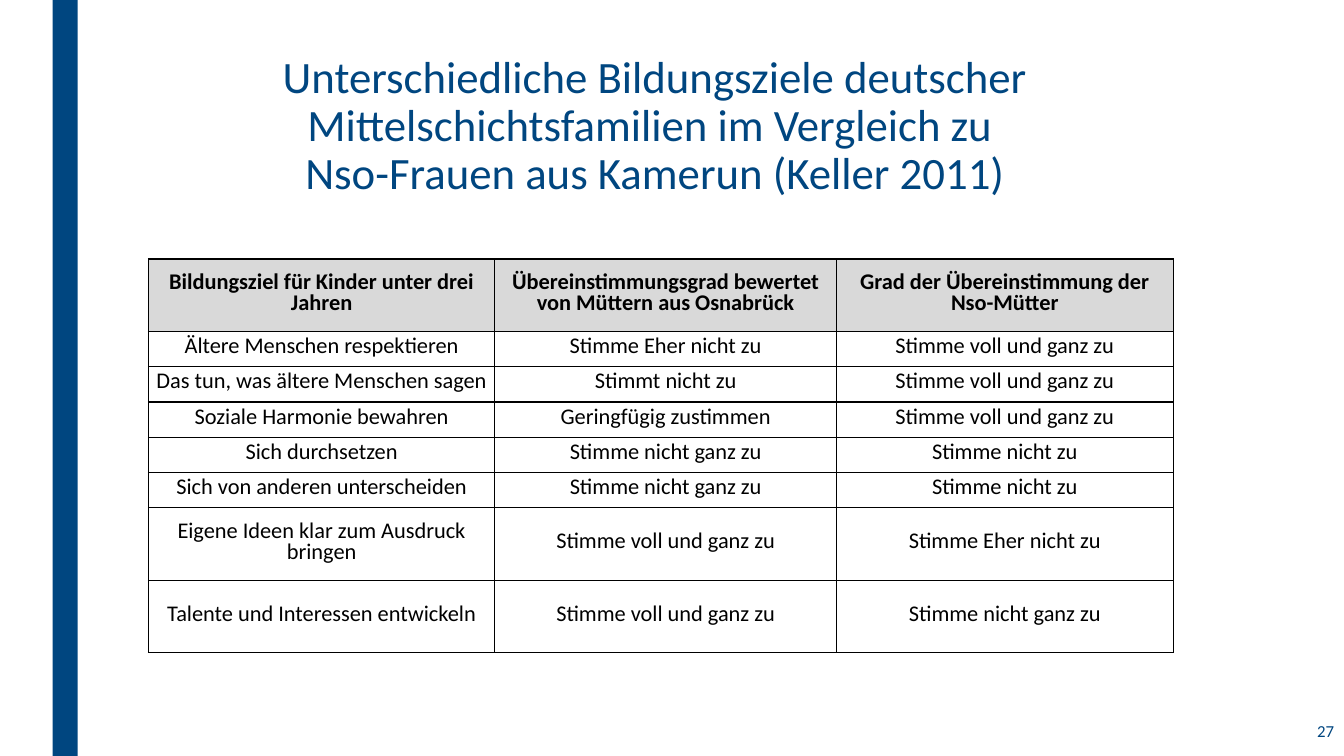
import pptx
import pptx.dml.color
import pptx.enum.shapes
import pptx.enum.text
import pptx.oxml
import pptx.oxml.ns
import pptx.util

Pt = pptx.util.Pt
ALIGN = pptx.enum.text.PP_ALIGN
ANCHOR = pptx.enum.text.MSO_ANCHOR


def color(value):
    return pptx.dml.color.RGBColor.from_string(value)


class GoalsSlide:
    font = "Calibri"
    blue = "004680"
    black = "000000"
    header_gray = "D9D9D9"

    def __init__(self, deck):
        self.slide = deck.slides.add_slide(deck.slide_layouts[6])

    def add_words(self, paragraph, words, size, ink, align, bold=False):
        paragraph.alignment = align
        for number, line in enumerate(words.split("\n")):
            if number:
                paragraph.add_line_break()
            run = paragraph.add_run()
            run.text = line
            run.font.name = self.font
            run.font.size = Pt(size)
            run.font.bold = bold
            run.font.color.rgb = color(ink)

    def bar(self, left, top, width, height):
        stripe = self.slide.shapes.add_shape(
            pptx.enum.shapes.MSO_SHAPE.RECTANGLE,
            Pt(left), Pt(top), Pt(width), Pt(height))
        stripe.shadow.inherit = False
        stripe.fill.solid()
        stripe.fill.fore_color.rgb = color(self.blue)
        stripe.line.fill.background()

    def text(self, left, top, width, height, words, size, align, anchor, spacing=1.0):
        frame = self.slide.shapes.add_textbox(
            Pt(left), Pt(top), Pt(width), Pt(height)).text_frame
        frame.word_wrap = True
        frame.vertical_anchor = anchor
        paragraph = frame.paragraphs[0]
        paragraph.line_spacing = spacing
        self.add_words(paragraph, words, size, self.blue, align)

    def border(self, cell):
        """Draw a 1 pt line on all four sides of a cell."""
        properties = cell._tc.get_or_add_tcPr()
        for position, side in enumerate(("lnL", "lnR", "lnT", "lnB")):
            properties.insert(position, pptx.oxml.parse_xml(
                f'<a:{side} {pptx.oxml.ns.nsdecls("a")} w="{Pt(1)}"><a:solidFill>'
                f'<a:srgbClr val="{self.black}"/></a:solidFill></a:{side}>'))

    def cell(self, cell, words, header):
        cell.margin_left = cell.margin_right = Pt(5)
        cell.margin_top = cell.margin_bottom = 0
        cell.vertical_anchor = ANCHOR.MIDDLE
        if header:
            cell.fill.solid()
            cell.fill.fore_color.rgb = color(self.header_gray)
        else:
            cell.fill.background()
        paragraph = cell.text_frame.paragraphs[0]
        paragraph.line_spacing = Pt(15)
        self.add_words(paragraph, words, 16, self.black, ALIGN.CENTER, header)
        self.border(cell)

    def table(self, left, top, widths, heights, rows):
        table = self.slide.shapes.add_table(
            len(rows), len(widths), Pt(left), Pt(top),
            Pt(sum(widths)), Pt(sum(heights))).table
        table.horz_banding = False
        for column, width in zip(table.columns, widths):
            column.width = Pt(width)
        for row, height in zip(table.rows, heights):
            row.height = Pt(height)
        for r, row in enumerate(rows):
            for c, words in enumerate(row):
                self.cell(table.cell(r, c), words, header=r == 0)


FULL = "Stimme voll und ganz zu"
PARTLY = "Stimme nicht ganz zu"
RATHER_NOT = "Stimme Eher nicht zu"
NOT = "Stimme nicht zu"

RATINGS = [
    ("Bildungsziel für Kinder unter drei Jahren",
     "Übereinstimmungsgrad bewertet von Müttern aus Osnabrück",
     "Grad der Übereinstimmung der Nso-Mütter"),
    ("Ältere Menschen respektieren", RATHER_NOT, FULL),
    ("Das tun, was ältere Menschen sagen", "Stimmt nicht zu", FULL),
    ("Soziale Harmonie bewahren", "Geringfügig zustimmen", FULL),
    ("Sich durchsetzen", PARTLY, NOT),
    ("Sich von anderen unterscheiden", PARTLY, NOT),
    ("Eigene Ideen klar zum Ausdruck bringen", FULL, RATHER_NOT),
    ("Talente und Interessen entwickeln", FULL, PARTLY),
]
TALL, LOW = 51.8, 25.2


def main():
    deck = pptx.Presentation()
    deck.slide_width, deck.slide_height = Pt(960), Pt(540)
    goals = GoalsSlide(deck)
    goals.bar(37.5, 0, 18, 540)
    goals.text(102, 36, 732, 137.5,
               "Unterschiedliche Bildungsziele deutscher Mittelschichtsfamilien "
               "im Vergleich zu \nNso-Frauen aus Kamerun (Keller 2011)",
               32, ALIGN.CENTER, ANCHOR.TOP, 0.89)
    goals.table(106, 185, [247.5, 244, 240.5],
                [TALL] + [LOW] * 5 + [TALL] * 2, RATINGS)
    goals.text(834, 506, 126, 32, "27", 12, ALIGN.RIGHT, ANCHOR.MIDDLE)
    deck.save("out.pptx")


if __name__ == "__main__":
    main()
